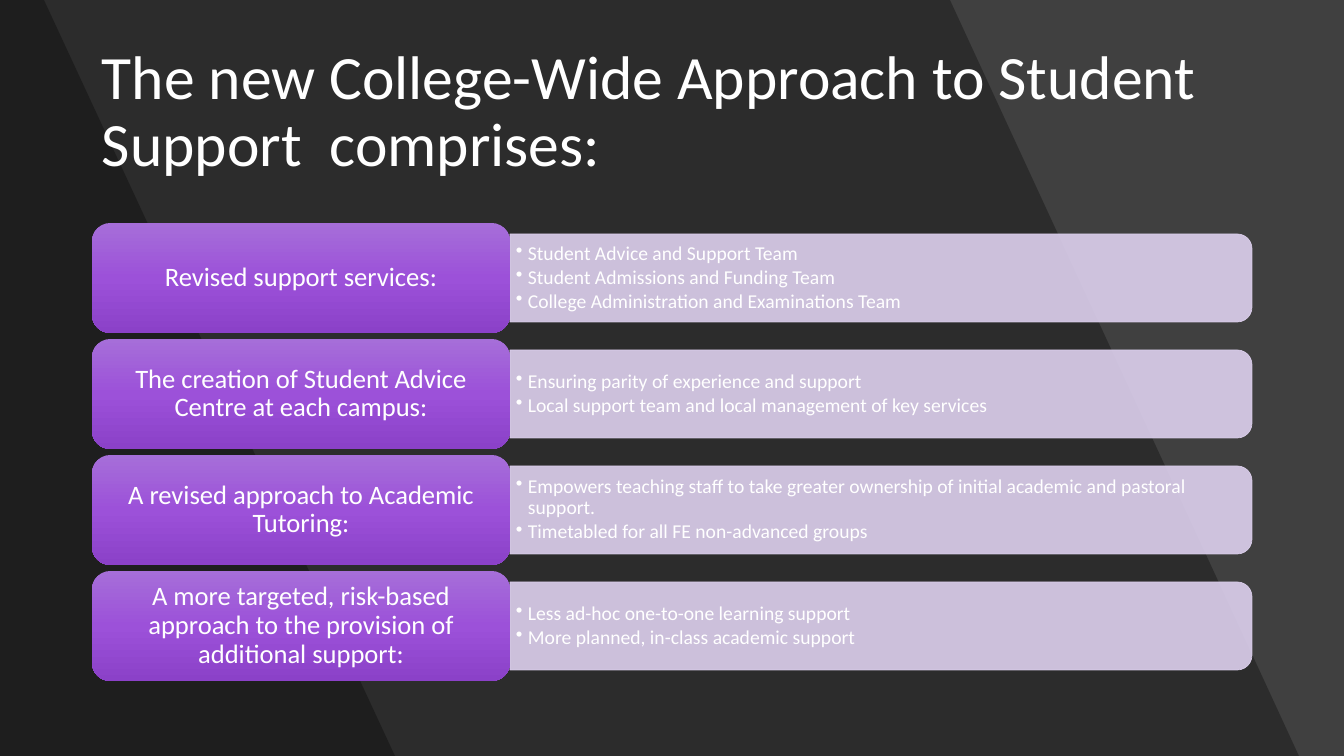
from copy import deepcopy
from pptx import Presentation, util as u
from pptx.dml.color import RGBColor
from pptx.enum import shapes, text
from pptx.oxml.ns import qn
from lxml import etree

# Content
TITLE = "The new College-Wide Approach to Student Support  comprises:"
ROWS = [
    ("Revised support services:",
     ["Student Advice and Support Team",
      "Student Admissions and Funding Team",
      "College Administration and Examinations Team"]),
    ("The creation of Student Advice Centre at each campus:",
     ["Ensuring parity of experience and support",
      "Local support team and local management of key services"]),
    ("A revised approach to Academic Tutoring:",
     ["Empowers teaching staff to take greater ownership of initial "
      "academic and pastoral support.",
      "Timetabled for all FE non-advanced groups"]),
    ("A more targeted, risk-based approach to the provision of additional support:",
     ["Less ad-hoc one-to-one learning support",
      "More planned, in-class academic support"]),
]
HEX = {"back": "404040", "shade": "000000", "text": "FFFFFF", "bar": "DED1EF",
       "light": "A66ED9", "mid": "9C51D9", "dark": "8B41C8"}
FONT = "Calibri"

# Layout in px
WIDE, HIGH = 1344, 756
SCALE = 12192000 / WIDE
SHADES = [(950, 1299), (44, 395)]  # right edge at top and bottom
LEFT, TOP, STEP = 92, 223, 116
HEAD_W, HEAD_H = 418, 110
BAR_X, BAR_W, BAR_H = 510, 742, 88
LIST_W, LIST_H, INDENT = 738, 80, 12


def px(n):
    return u.Emu(round(n * SCALE))


def box(*sides):
    return [px(n) for n in sides]


def rgb(name):
    return RGBColor.from_string(HEX[name])


def paint(fill, name, alpha):
    fill.solid()
    fill.fore_color.rgb = rgb(name)
    color = fill._xPr.find(qn("a:solidFill"))[0]
    etree.SubElement(color, qn("a:alpha"), val=str(alpha * 1000))


def set_text(frame, lines, size, align, pad_x, pad_y):
    frame.word_wrap = True
    frame.auto_size = text.MSO_AUTO_SIZE.NONE
    frame.vertical_anchor = text.MSO_ANCHOR.MIDDLE
    frame.margin_left = frame.margin_right = px(pad_x)
    frame.margin_top = frame.margin_bottom = px(pad_y)
    for i, line in enumerate(lines):
        para = frame.paragraphs[0] if i == 0 else frame.add_paragraph()
        para.text = line
        para.alignment = align
        para.line_spacing = 0.9
        para.font.size = u.Pt(size)
        para.font.name = FONT
        para.font.color.rgb = rgb("text")


def add_bar(tree, mid):
    # Turned a quarter, so that the rounded end points right
    bar = tree.add_shape(
        shapes.MSO_SHAPE.ROUND_2_SAME_RECTANGLE,
        *box(BAR_X + (BAR_W - BAR_H) / 2, mid - BAR_W / 2, BAR_H, BAR_W))
    bar.rotation = 90
    bar.shadow.inherit = False
    paint(bar.fill, "bar", 90)
    paint(bar.line.fill, "bar", 90)
    bar.line.width = u.Pt(0.5)


def add_list(tree, mid, items):
    note = tree.add_textbox(*box(BAR_X, mid - LIST_H / 2, LIST_W, LIST_H))
    set_text(note.text_frame, items, 14, text.PP_ALIGN.LEFT, 6, 3)
    for para in note.text_frame.paragraphs:
        para.space_after = u.Pt(2)
        props = para._p.get_or_add_pPr()
        props.set("marL", str(px(INDENT)))
        props.set("indent", str(-px(INDENT)))
        bullet = etree.Element(qn("a:buChar"), char="•")
        props.find(qn("a:defRPr")).addprevious(bullet)


def add_head(tree, top, label):
    head = tree.add_shape(shapes.MSO_SHAPE.ROUNDED_RECTANGLE,
                          *box(LEFT, top, HEAD_W, HEAD_H))
    head.shadow.inherit = False
    head.line.fill.background()
    head.fill.gradient()
    head.fill.gradient_angle = 270
    first = head._element.spPr.find(qn("a:gradFill")).find(qn("a:gsLst"))[0]
    first.addnext(deepcopy(first))
    for stop, name, at in zip(head.fill.gradient_stops,
                              ("light", "mid", "dark"), (0, 0.5, 1)):
        stop.color.rgb = rgb(name)
        stop.position = at
    set_text(head.text_frame, [label], 19, text.PP_ALIGN.CENTER, 13, 10)


def main():
    deck = Presentation()
    deck.slide_width, deck.slide_height = box(WIDE, HIGH)
    slide = deck.slides.add_slide(deck.slide_layouts[5])
    tree = slide.shapes

    # Background and slanted shades
    slide.background.fill.solid()
    slide.background.fill.fore_color.rgb = rgb("back")
    for upper, lower in SHADES:
        pen = tree.build_freeform(0, 0, scale=SCALE)
        pen.add_line_segments([(upper, 0), (lower, HIGH), (0, HIGH)])
        shade = pen.convert_to_shape()
        shade.shadow.inherit = False
        shade.line.fill.background()
        paint(shade.fill, "shade", 30)

    # Title, in front of the shades
    title = tree.title
    title.left, title.top, title.width, title.height = box(92, 40, 1160, 146)
    set_text(title.text_frame, [TITLE], 44, text.PP_ALIGN.LEFT, 10, 5)
    shade._element.addnext(title._element)

    # Rows
    for i, (label, items) in enumerate(ROWS):
        top = TOP + i * STEP
        mid = top + HEAD_H / 2
        add_bar(tree, mid)
        add_list(tree, mid, items)
        add_head(tree, top, label)

    deck.save("out.pptx")


if __name__ == "__main__":
    main()
